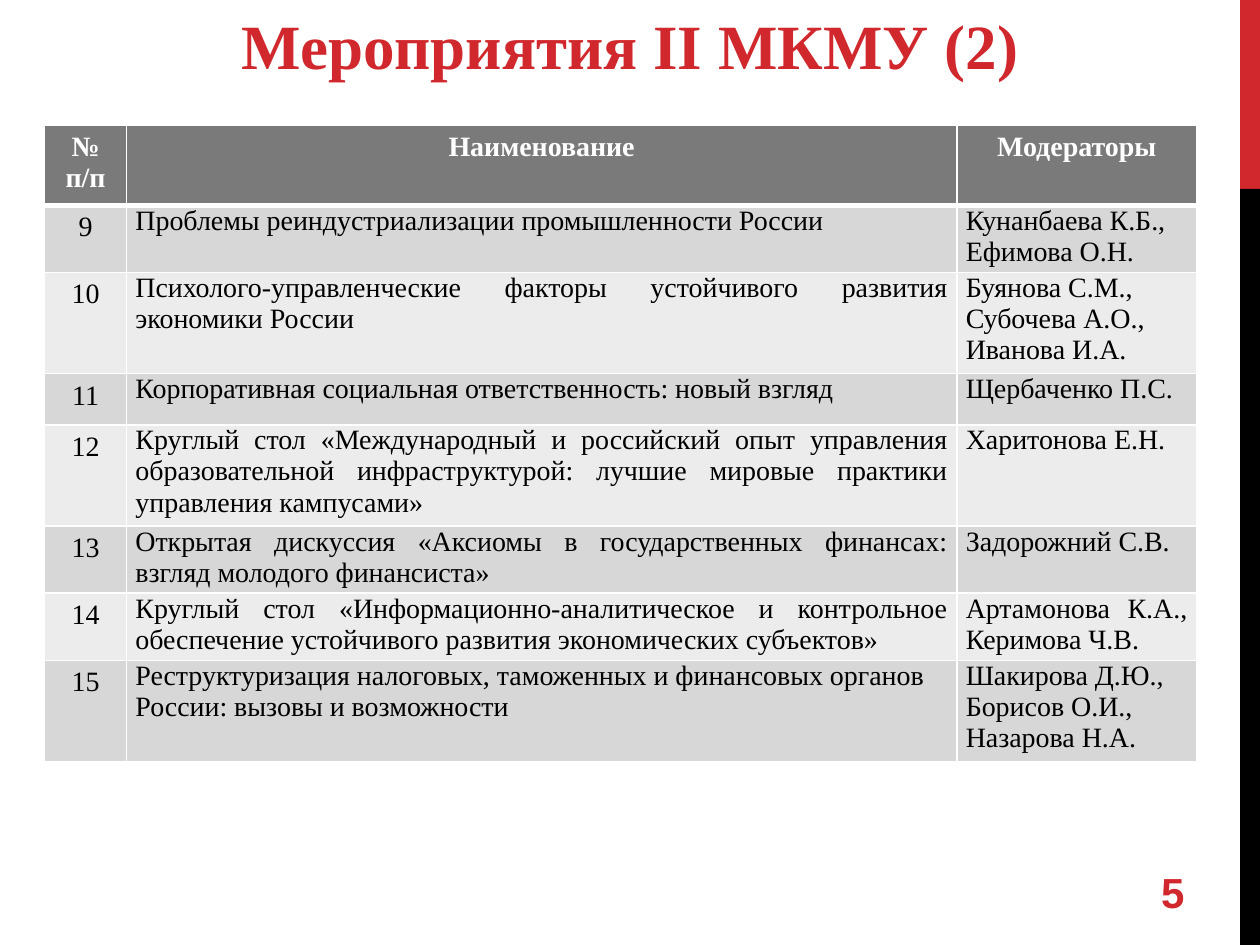
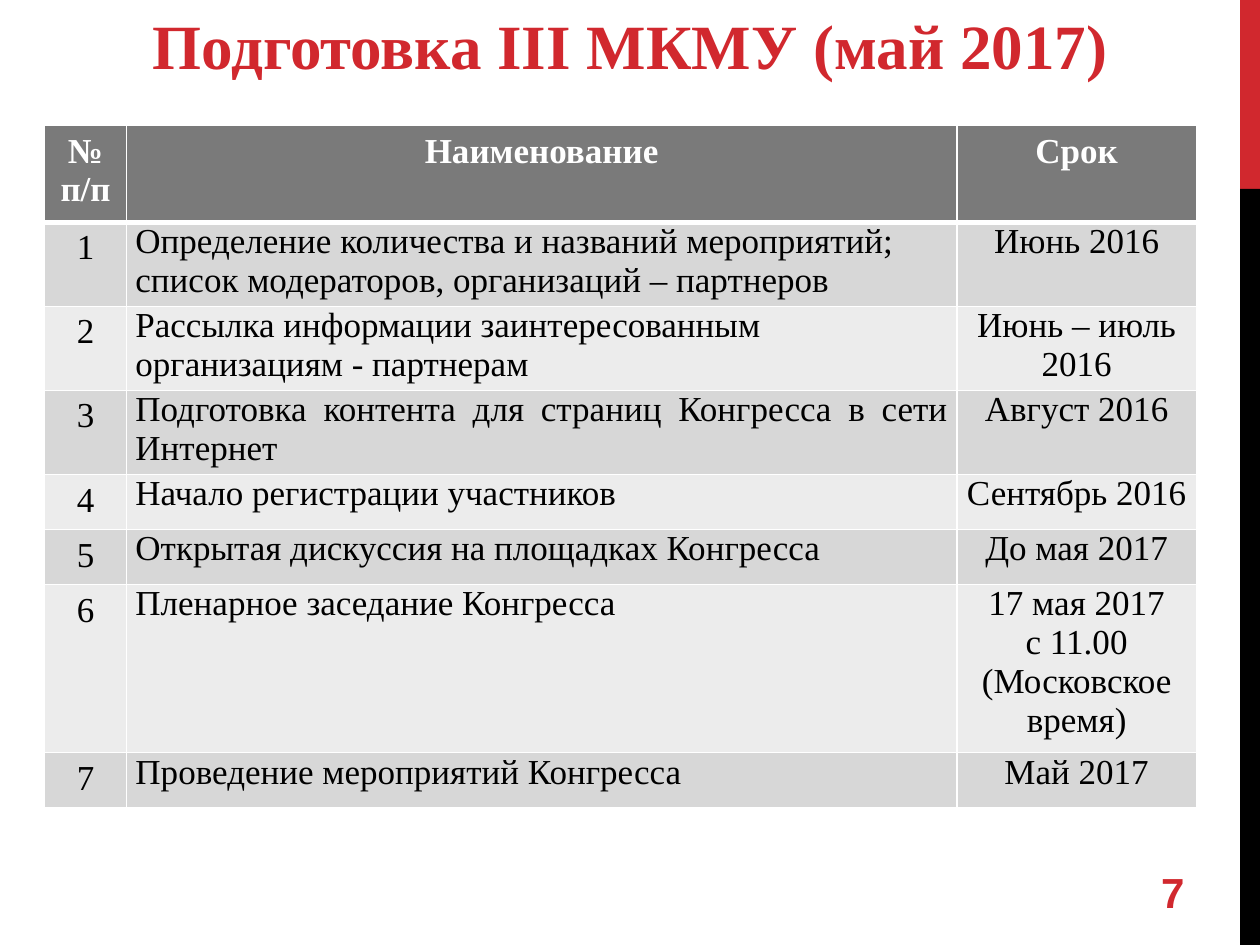
from lxml import etree
from pptx import Presentation
from pptx.dml.color import RGBColor
from pptx.enum.shapes import MSO_SHAPE
from pptx.enum.text import MSO_ANCHOR, PP_ALIGN
from pptx.oxml.ns import qn
from pptx.util import Cm, Pt

RECTANGLE = MSO_SHAPE.RECTANGLE
TOP, MIDDLE = MSO_ANCHOR.TOP, MSO_ANCHOR.MIDDLE
LEFT, CENTER, RIGHT, JUSTIFY = (
    PP_ALIGN.LEFT, PP_ALIGN.CENTER, PP_ALIGN.RIGHT, PP_ALIGN.JUSTIFY)

COLORS = {
    "red": "D1282E",
    "black": "000000",
    "white": "FFFFFF",
    "header": "7A7A7A",
    "odd_row": "D7D7D7",
    "even_row": "ECECEC",
}
SERIF, SANS = "Times New Roman", "Arial"

# Side bands: color, top, height
BANDS = [("red", 0, 3.81), ("black", 3.81, 15.24)]
COLUMN_WIDTHS = [1.65, 16.74, 4.83]
BODY_MARGINS = {"margin_left": Cm(0.18), "margin_right": Cm(0.18),
                "margin_top": 0, "margin_bottom": 0}

# Each table row: name, name alignment, last column, its alignment
PAGES = [
    {
        "title": "Мероприятия II МКМУ (2)",
        "page_number": 5,
        "last_header": "Модераторы",
        "first_item": 9,
        "size": 16,
        "row_heights": [1.59, 1.35, 2.04, 1.03, 2.04, 1.35, 1.35, 2.03],
        "rows": [
            ("Проблемы реиндустриализации промышленности России", JUSTIFY,
             "Кунанбаева К.Б., Ефимова О.Н.", LEFT),
            ("Психолого-управленческие факторы устойчивого развития "
             "экономики России", JUSTIFY,
             "Буянова С.М.,\nСубочева А.О.,\nИванова И.А.", LEFT),
            ("Корпоративная социальная ответственность: новый взгляд", JUSTIFY,
             "Щербаченко П.С.", LEFT),
            ("Круглый стол «Международный и российский опыт управления "
             "образовательной инфраструктурой: лучшие мировые практики "
             "управления кампусами»", JUSTIFY,
             "Харитонова Е.Н.", LEFT),
            ("Открытая дискуссия «Аксиомы в государственных финансах: "
             "взгляд молодого финансиста»", JUSTIFY,
             "Задорожний С.В.", LEFT),
            ("Круглый стол «Информационно-аналитическое и контрольное "
             "обеспечение устойчивого развития экономических субъектов»",
             JUSTIFY, "Артамонова К.А., Керимова Ч.В.", JUSTIFY),
            ("Реструктуризация налоговых, таможенных и финансовых органов "
             "России: вызовы и возможности", LEFT,
             "Шакирова Д.Ю.,\nБорисов О.И.,\nНазарова Н.А.", LEFT),
        ],
    },
    {
        "title": "Подготовка III МКМУ (май 2017)",
        "page_number": 7,
        "last_header": "Срок",
        "first_item": 1,
        "size": 20,
        "row_heights": [1.94, 1.69, 1.69, 1.69, 1.11, 1.11, 3.39, 1.1],
        "rows": [
            ("Определение количества и названий мероприятий; "
             "список модераторов, организаций – партнеров", LEFT,
             "Июнь 2016", CENTER),
            ("Рассылка информации заинтересованным "
             "организациям - партнерам", LEFT, "Июнь – июль 2016", CENTER),
            ("Подготовка контента для страниц Конгресса в сети Интернет",
             JUSTIFY, "Август 2016", CENTER),
            ("Начало регистрации участников", JUSTIFY,
             "Сентябрь 2016", CENTER),
            ("Открытая дискуссия на площадках Конгресса", JUSTIFY,
             "До мая 2017", CENTER),
            ("Пленарное заседание Конгресса", JUSTIFY,
             "17 мая 2017\nс 11.00 (Московское время)", CENTER),
            ("Проведение мероприятий Конгресса", LEFT, "Май 2017", CENTER),
        ],
    },
]


def write_text(frame, text, alignment, color, **font):
    """Fill a text frame, one paragraph per line of text."""
    frame.text = text
    frame.word_wrap = True
    for para in frame.paragraphs:
        para.alignment = alignment
        for span in para.runs:
            span.font.color.rgb = RGBColor.from_string(COLORS[color])
            for name, value in font.items():
                setattr(span.font, name, value)


def add_white_borders(cell, top, bottom):
    """Draw the four cell borders; widths are in points."""
    properties = cell._tc.get_or_add_tcPr()
    for tag, width in [("lnL", 1), ("lnR", 1), ("lnT", top), ("lnB", bottom)]:
        line = etree.SubElement(properties, qn(f"a:{tag}"), w=str(Pt(width)))
        fill = etree.SubElement(line, qn("a:solidFill"))
        etree.SubElement(fill, qn("a:srgbClr"), val=COLORS["white"])


deck = Presentation()
deck.slide_width, deck.slide_height = Cm(25.4), Cm(19.05)

for content in PAGES:
    page = deck.slides.add_slide(deck.slide_layouts[6])

    for color, top, height in BANDS:
        band = page.shapes.add_shape(
            RECTANGLE, Cm(25), Cm(top), Cm(0.4), Cm(height))
        band.shadow.inherit = False
        band.fill.solid()
        band.fill.fore_color.rgb = RGBColor.from_string(COLORS[color])
        band.line.fill.background()

    title_box = page.shapes.add_textbox(Cm(0.5), 0, Cm(24.4), Cm(1.8))
    write_text(title_box.text_frame, content["title"], CENTER, "red",
               name=SERIF, size=Pt(36), bold=True)

    number_box = page.shapes.add_textbox(
        Cm(18.21), Cm(17.35), Cm(5.92), Cm(1.27))
    number_box.text_frame.vertical_anchor = MIDDLE
    write_text(number_box.text_frame, str(content["page_number"]), RIGHT, "red",
               name=SANS, size=Pt(24), bold=True)

    heights = content["row_heights"]
    table = page.shapes.add_table(
        len(heights), len(COLUMN_WIDTHS), Cm(0.9), Cm(2.53),
        Cm(sum(COLUMN_WIDTHS)), Cm(sum(heights))).table
    table.horz_banding = False
    for column, width in zip(table.columns, COLUMN_WIDTHS):
        column.width = Cm(width)
    for row, height in zip(table.rows, heights):
        row.height = Cm(height)

    table_rows = [[("№ п/п", CENTER), ("Наименование", CENTER),
                   (content["last_header"], CENTER)]]
    for item, (name, name_align, last, last_align) in enumerate(
            content["rows"], start=content["first_item"]):
        table_rows.append(
            [(str(item), CENTER), (name, name_align), (last, last_align)])

    for row_index, entries in enumerate(table_rows):
        is_header = row_index == 0
        fill_color = ("header" if is_header
                      else "odd_row" if row_index % 2 else "even_row")
        for column_index, (text, alignment) in enumerate(entries):
            cell = table.cell(row_index, column_index)
            add_white_borders(cell, top=3 if row_index == 1 else 1,
                              bottom=3 if is_header else 1)
            cell.fill.solid()
            cell.fill.fore_color.rgb = RGBColor.from_string(COLORS[fill_color])
            cell.vertical_anchor = TOP
            if not is_header and column_index > 0:
                for side, margin in BODY_MARGINS.items():
                    setattr(cell, side, margin)
            write_text(cell.text_frame, text, alignment,
                       "white" if is_header else "black",
                       name=SERIF, size=Pt(content["size"]), bold=is_header)

deck.save("out.pptx")
